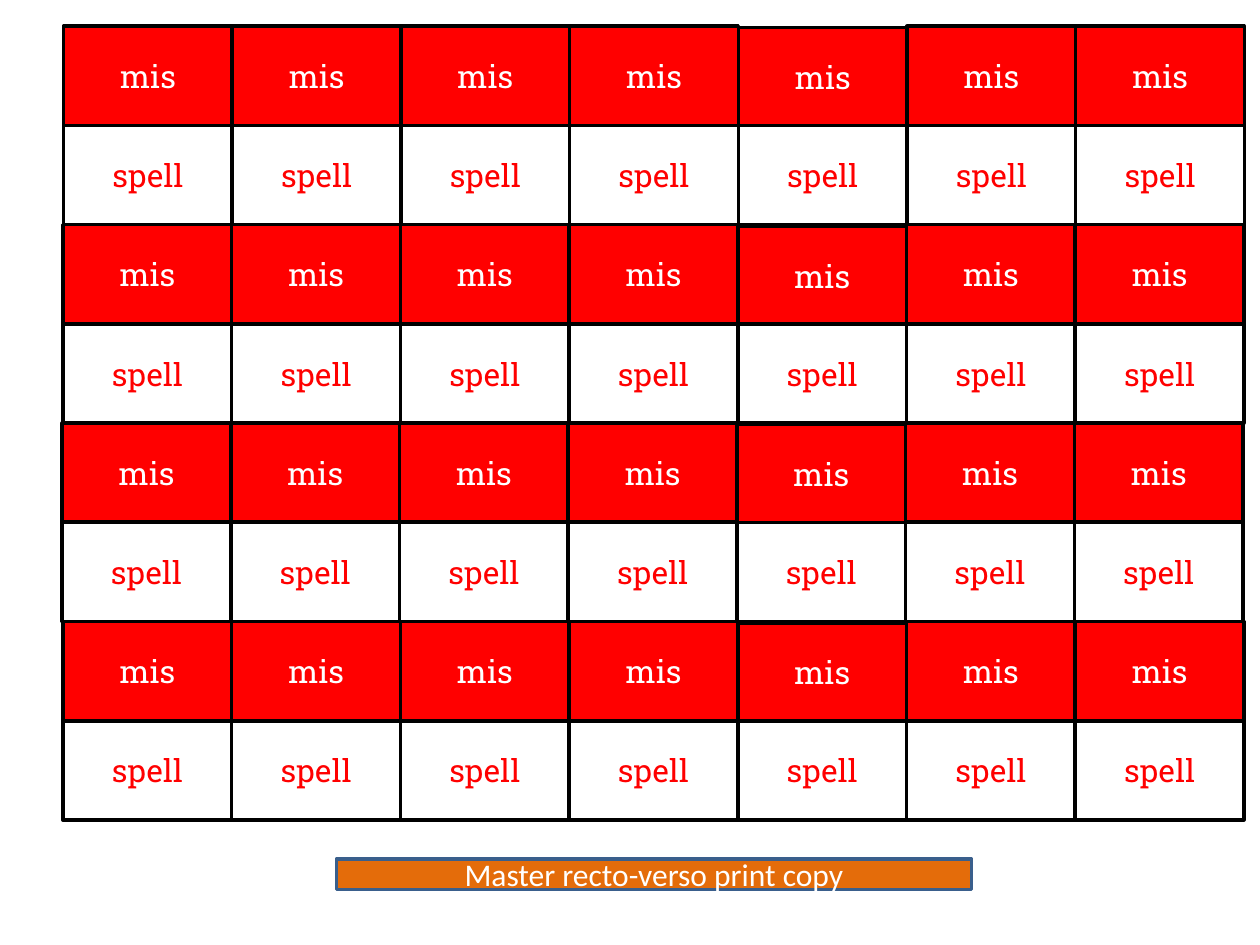
from dataclasses import dataclass

import pptx
import pptx.dml.color
import pptx.enum.shapes
import pptx.enum.text
import pptx.util

Pt = pptx.util.Pt

COLUMNS = 7
CARD_WIDTH = 96.4
CARD_HEIGHT = 56.7
GRID_TOP = 15
LOWERED_COLUMN = 4
LOWERED_BY = 0.7


@dataclass(frozen=True)
class BoxStyle:
    fill: str
    line: str
    text: str
    font: str


@dataclass(frozen=True)
class Band:
    """A pair of card rows, prefixes above roots."""
    index: int
    left: float


PREFIX = BoxStyle("FF0000", "000000", "FFFFFF", "Roboto Slab")
ROOT = BoxStyle("FFFFFF", "000000", "FF0000", "Roboto Slab")
CAPTION = BoxStyle("E46C0A", "3A5F8C", "FFFFFF", "Calibri")

# Listed back to front: the borders of later bands overlap earlier ones.
BANDS = [Band(1, 36), Band(3, 36), Band(2, 35.5), Band(0, 36.3)]


def color(value: str) -> pptx.dml.color.RGBColor:
    return pptx.dml.color.RGBColor.from_string(value)


def add_box(slide, left: float, top: float, width: float, height: float,
            text: str, style: BoxStyle) -> None:
    shape = slide.shapes.add_shape(
        pptx.enum.shapes.MSO_SHAPE.RECTANGLE,
        Pt(left), Pt(top), Pt(width), Pt(height))
    shape.shadow.inherit = False
    shape.fill.solid()
    shape.fill.fore_color.rgb = color(style.fill)
    shape.line.color.rgb = color(style.line)
    shape.line.width = Pt(2)

    frame = shape.text_frame
    frame.word_wrap = True
    frame.vertical_anchor = pptx.enum.text.MSO_ANCHOR.MIDDLE
    paragraph = frame.paragraphs[0]
    paragraph.alignment = pptx.enum.text.PP_ALIGN.CENTER
    run = paragraph.add_run()
    run.text = text
    run.font.name = style.font
    run.font.size = Pt(18)
    run.font.color.rgb = color(style.text)


def add_band(slide, band: Band) -> None:
    prefix_top = GRID_TOP + 2 * band.index * CARD_HEIGHT
    root_top = prefix_top + CARD_HEIGHT
    for column in range(COLUMNS):
        left = band.left + column * CARD_WIDTH
        drop = LOWERED_BY if column == LOWERED_COLUMN else 0
        add_box(slide, left, prefix_top + drop, CARD_WIDTH, CARD_HEIGHT,
                "mis", PREFIX)
        add_box(slide, left, root_top, CARD_WIDTH, CARD_HEIGHT,
                "spell", ROOT)


def main() -> None:
    presentation = pptx.Presentation()
    presentation.slide_width = Pt(720)
    presentation.slide_height = Pt(540)
    blank_layout = presentation.slide_layouts[6]
    slide = presentation.slides.add_slide(blank_layout)

    for band in BANDS:
        add_band(slide, band)
    add_box(slide, 192.2, 491, 363, 17.3,
            "Master recto-verso print copy", CAPTION)

    presentation.save("out.pptx")


if __name__ == "__main__":
    main()
